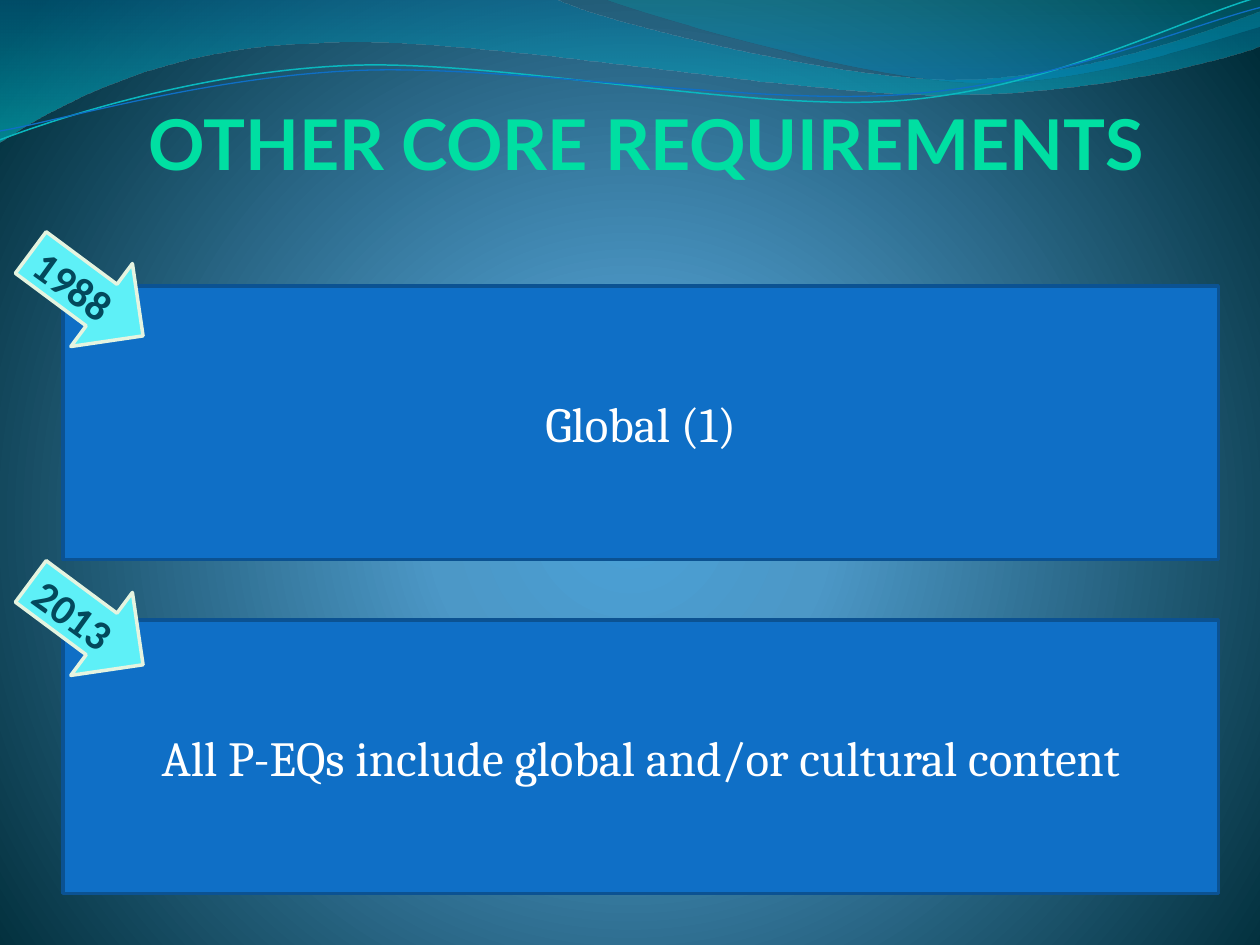
from lxml import etree
from pptx import Presentation
from pptx.dml.color import RGBColor
from pptx.enum.shapes import MSO_SHAPE
from pptx.enum.text import MSO_ANCHOR, MSO_AUTO_SIZE, PP_ALIGN
from pptx.oxml import parse_xml
from pptx.oxml.ns import nsdecls, qn
from pptx.util import Inches, Pt

RECT, ARROW = MSO_SHAPE.RECTANGLE, MSO_SHAPE.DOWN_ARROW
TOP, MIDDLE = MSO_ANCHOR.TOP, MSO_ANCHOR.MIDDLE
CENTER, LEFT = PP_ALIGN.CENTER, PP_ALIGN.LEFT
GROW = MSO_AUTO_SIZE.SHAPE_TO_FIT_TEXT

TITLE = "OTHER CORE REQUIREMENTS"
# year, text, top of box, top of arrow
ROWS = [
    ("1988", "Global (1)", 2.27, 1.78),
    ("2013", "All P-EQs include global and/or cultural content", 4.92, 4.39),
]

# gradient stops: position, colour, opacity
BACK = [(0, "4AA0D6", 100), (25, "4C98C7", 100), (100, "002C38", 100)]
GREEN = [(0, "006F51", 100), (43, "00DFA2", 100),
         (48, "00D097", 100), (100, "006F51", 100)]
CIRCLE = ('<a:path path="circle"><a:fillToRect l="10000" t="110000" '
          'r="10000" b="100000"/></a:path>')
DOWN = '<a:lin ang="5400000" scaled="1"/>'

# outlines: a pair is a line to a point, six numbers are a Bezier curve
BANDS = [
    ([(0, 0), (4.4, -0.01), (4.76, 0.17, 6.64, 0.63, 7.58, 0.63),
      (8.53, 0.63, 9.58, 0.26, 10, 0.09), (10.01, 0.36),
      (9.83, 0.44, 8.7, 0.76, 7.46, 0.75),
      (6.22, 0.75, 3.82, 0.28, 2.57, 0.34),
      (1.29, 0.36, 0.46, 0.83, -0.01, 1.13), (0, 0)],
     [(0, "0074A1", 45), (100, "00C6CF", 55)]),
    ([(4.79, -0.01), (5.09, 0.11, 6.82, 0.62, 7.69, 0.65),
      (8.56, 0.69, 9.61, 0.32, 10, 0.21), (10, 0), (4.79, -0.01)],
     [(0, "00A1A9", 30), (80, "008BBF", 45)]),
]
WAVES = [
    ([(0, 1.11), (0.48, 0.93, 1.58, 0.57, 2.77, 0.52),
      (3.95, 0.47, 5.93, 0.89, 7.13, 0.8),
      (8.33, 0.71, 9.38, 0.15, 9.98, -0.02)], "0AB8BF", 0.85),
    ([(0, 1.04), (0.47, 0.96, 1.64, 0.61, 2.83, 0.56),
      (4.03, 0.51, 5.97, 0.84, 7.17, 0.75),
      (8.36, 0.67, 9.41, 0.21, 10, 0.06)], "0F6FC6", 0.75),
]


def color(code):
    return RGBColor.from_string(code)


def blend(fill, root, stops, kind=DOWN):
    """Give fill, held somewhere below root, a gradient with these stops."""
    fill.gradient()
    marks = "".join(
        f'<a:gs pos="{pos * 1000}"><a:srgbClr val="{code}">'
        f'<a:alpha val="{alpha * 1000}"/></a:srgbClr></a:gs>'
        for pos, code, alpha in stops)
    new = parse_xml(f'<a:gradFill {nsdecls("a")} rotWithShape="1">'
                    f'<a:gsLst>{marks}</a:gsLst>{kind}</a:gradFill>')
    old = root.find(".//" + qn("a:gradFill"))
    old.getparent().replace(old, new)


def draw(slide, outline, close):
    """Lay all points as lines, then join each three of a curve into one."""
    points = [(Inches(part[i]), Inches(part[i + 1]))
              for part in outline for i in range(0, len(part), 2)]
    pen = slide.shapes.build_freeform(*points[0])
    pen.add_line_segments(points[1:], close=close)
    shape = pen.convert_to_shape()
    shape.shadow.inherit = False
    lines = shape.element.findall(".//" + qn("a:lnTo"))
    for part in outline[1:]:
        used, lines = lines[:len(part) // 2], lines[len(part) // 2:]
        if len(used) == 3:
            curve = etree.Element(qn("a:cubicBezTo"))
            used[0].addprevious(curve)
            for line in used:
                curve.append(line[0])
                line.getparent().remove(line)
    return shape


def block(slide, kind, box, fill, line):
    shape = slide.shapes.add_shape(kind, *map(Inches, box))
    shape.shadow.inherit = False
    shape.fill.solid()
    shape.fill.fore_color.rgb = color(fill)
    shape.line.color.rgb = color(line)
    shape.line.width = Pt(2)
    return shape


def write(shape, text, font, size, code, bold=False, align=LEFT):
    frame = shape.text_frame
    frame.word_wrap = True
    frame.text = text
    para = frame.paragraphs[0]
    para.alignment = align
    run = para.runs[0]
    run.font.name, run.font.size, run.font.bold = font, Pt(size), bold
    run.font.color.rgb = color(code)
    return run


def head(slide):
    box = map(Inches, (1.08, 0.75, 8.5, 0.77))
    shape = slide.shapes.add_shape(RECT, *box)
    shape.shadow.inherit = False
    shape.fill.background()
    shape.line.fill.background()
    run = write(shape, TITLE, "Lato", 40, "00DFA2", bold=True)
    shape.text_frame.vertical_anchor = TOP
    shape.text_frame.auto_size = GROW
    blend(run.font.fill, run._r, GREEN)
    edge = parse_xml(f'<a:ln {nsdecls("a")} w="{Pt(0.71)}"><a:solidFill>'
                     '<a:srgbClr val="00A578"/></a:solidFill></a:ln>')
    run._r.get_or_add_rPr().insert(0, edge)


def main():
    deck = Presentation()
    deck.slide_width, deck.slide_height = Inches(10), Inches(7.5)
    slide = deck.slides.add_slide(deck.slide_layouts[6])
    blend(slide.background.fill, slide.element, BACK, CIRCLE)

    for outline, stops in BANDS:
        band = draw(slide, outline, True)
        blend(band.fill, band.element, stops)
        band.line.fill.background()
    for outline, code, width in WAVES:
        wave = draw(slide, outline, False)
        wave.fill.background()
        wave.line.color.rgb = color(code)
        wave.line.width = Pt(width)

    head(slide)
    for year, text, top, tip in ROWS:
        panel = block(slide, RECT, (0.5, top, 9.17, 2.17), "0F6FC6", "0B5292")
        panel.text_frame.vertical_anchor = MIDDLE
        write(panel, text, "Cambria", 28, "FFFFFF", align=CENTER)
        arrow = block(slide, ARROW, (0.28, tip, 0.82, 1.11), "5EF0F7", "E5F4E0")
        arrow.rotation = 306.6
        box = map(Inches, (0.13, tip + 0.29, 1.06, 0.5))
        date = slide.shapes.add_textbox(*box)
        write(date, year, "Calibri", 24, "03495C", bold=True)
        date.text_frame.auto_size = GROW
        date.rotation = 35.9
    deck.save("out.pptx")


if __name__ == "__main__":
    main()
